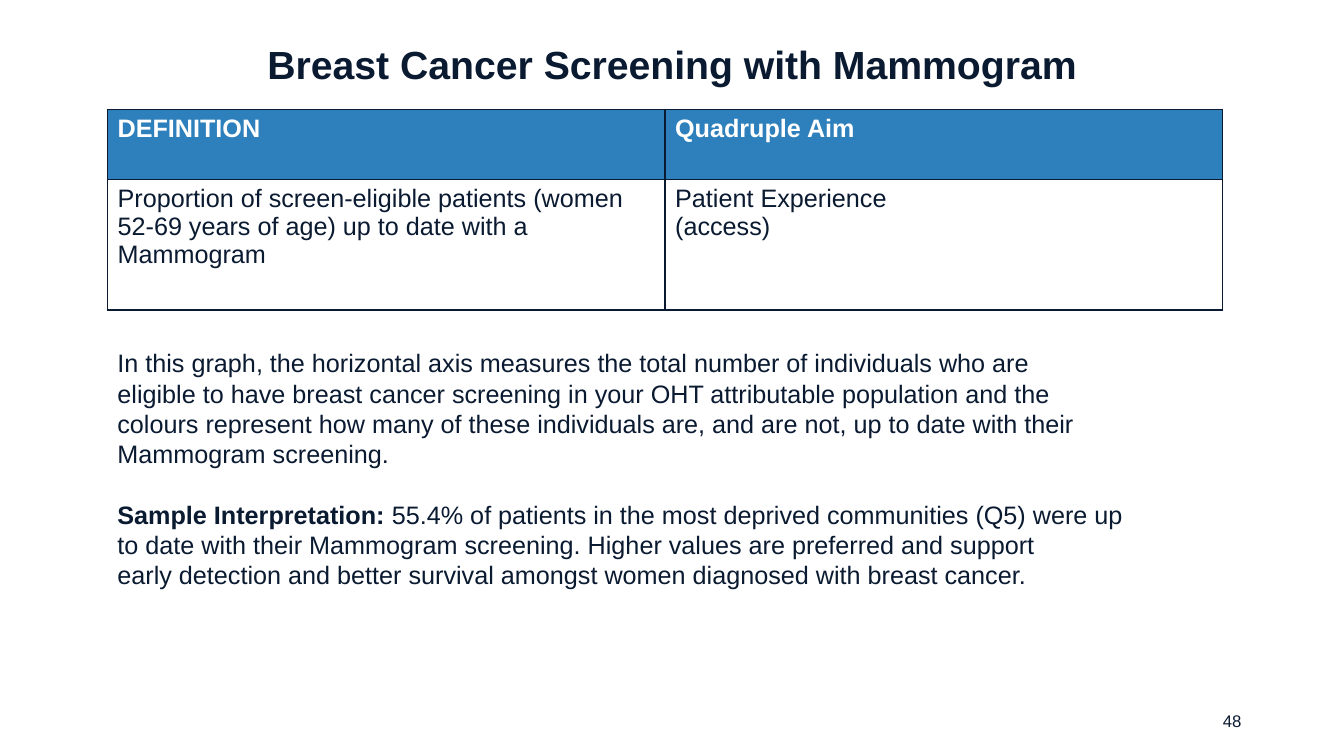
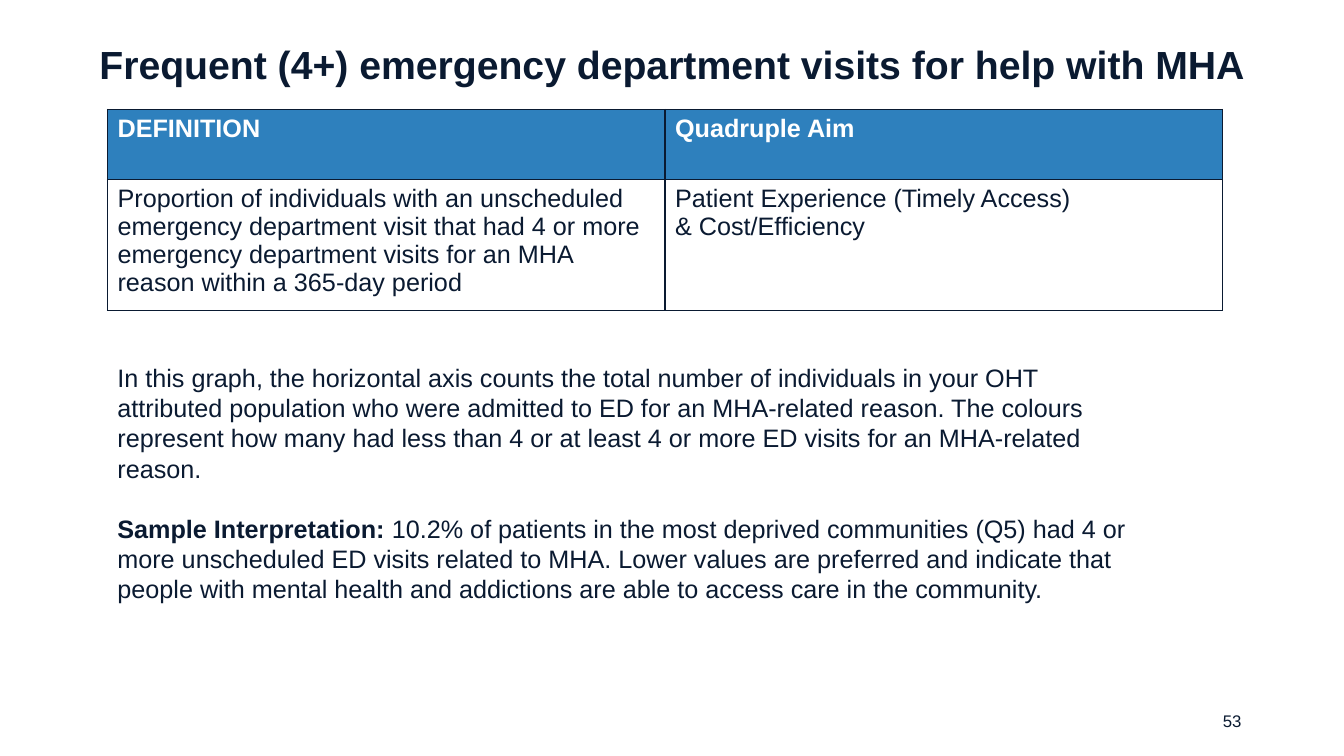
from pptx import Presentation
from pptx.dml.color import RGBColor
from pptx.enum.text import MSO_ANCHOR as Anchor, PP_ALIGN as Align
from pptx.oxml import parse_xml
from pptx.oxml.ns import nsdecls
from pptx.util import Cm, Pt

# Content; a tilde keeps two words on one line
HEADINGS = ["DEFINITION", "Quadruple Aim"]
INTERPRETATION = "Sample Interpretation: "
INDICATORS = [
    {
        "number": "48",
        "title": "Breast Cancer Screening with Mammogram",
        "definition": ["Proportion of screen-eligible patients (women 52-69 years of age) "
                       "up to date with a Mammogram"],
        "aim": ["Patient Experience", "(access)"],
        "text_top": 8.64,
        "text_height": 7.19,
        "graph": "In this graph, the horizontal axis measures the total number of "
                 "individuals who are eligible~to have breast cancer screening in your "
                 "OHT attributable population and the colours~represent how~many of "
                 "these individuals~are, and~are not, up to date with their Mammogram "
                 "screening.",
        "sample": "55.4% of patients in the most deprived communities (Q5) were up to "
                  "date with their Mammogram screening.~Higher values are preferred and "
                  "support early~detection and better survival amongst women diagnosed "
                  "with breast cancer.",
    },
    {
        "number": "53",
        "title": "Frequent (4+) emergency department visits for help with MHA",
        "definition": ["Proportion of individuals with an unscheduled emergency department "
                       "visit that had 4 or more emergency department visits for an MHA "
                       "reason within a 365-day period"],
        "aim": ["Patient Experience (Timely Access)", "& Cost/Efficiency"],
        "text_top": 9.0,
        "text_height": 6.4,
        "graph": "In this graph, the horizontal axis counts the total number of "
                 "individuals in your OHT attributed population who were admitted to ED "
                 "for an MHA-related reason. The colours represent how many had less "
                 "than 4 or at least 4 or more ED visits for an MHA-related reason.",
        "sample": "10.2% of patients in the most deprived communities (Q5) had 4 or more "
                  "unscheduled ED visits related to MHA. Lower values are preferred and "
                  "indicate that people with mental health and addictions are able to "
                  "access care in the community.",
    },
]

# Shared style
FONT = "Arial"
COLORS = {"ink": "0A1A31", "header": "2E80BD", "white": "FFFFFF"}
TITLE_SIZE, BODY_SIZE, NUMBER_SIZE = 28, 18, 12
LEFT, TABLE_TOP = 2.71, 2.76
COLUMN_WIDTH = 14.05
ROW_HEIGHTS = [1.76, 3.29]
HARD_SPACE = chr(160)


def add_span(para, text, size=BODY_SIZE, color="ink", bold=False):
    span = para.add_run()
    span.text = text.replace("~", HARD_SPACE)
    span.font.name = FONT
    span.font.size = Pt(size)
    span.font.bold = bold
    span.font.color.rgb = RGBColor.from_string(COLORS[color])


def add_box(page, left, top, width, height, anchor=Anchor.TOP):
    box = page.shapes.add_textbox(Cm(left), Cm(top), Cm(width), Cm(height))
    frame = box.text_frame
    frame.word_wrap = True
    frame.vertical_anchor = anchor
    return frame


def add_borders(cell):
    properties = cell._tc.get_or_add_tcPr()
    for position, side in enumerate(("lnL", "lnR", "lnT", "lnB")):
        # Borders must come before the cell fill
        properties.insert(position, parse_xml(
            f'<a:{side} {nsdecls("a")} w="12700"><a:solidFill>'
            f'<a:srgbClr val="{COLORS["ink"]}"/></a:solidFill></a:{side}>'))


def fill_cell(cell, lines, fill, color, bold):
    cell.fill.solid()
    cell.fill.fore_color.rgb = RGBColor.from_string(COLORS[fill])
    add_borders(cell)
    frame = cell.text_frame
    for index, line in enumerate(lines):
        para = frame.add_paragraph() if index else frame.paragraphs[0]
        add_span(para, line, color=color, bold=bold)


def add_definition_table(page, indicator):
    rows = [[[heading] for heading in HEADINGS],
            [indicator["definition"], indicator["aim"]]]
    table = page.shapes.add_table(
        len(rows), len(HEADINGS), Cm(LEFT), Cm(TABLE_TOP),
        Cm(COLUMN_WIDTH * len(HEADINGS)), Cm(sum(ROW_HEIGHTS))).table
    for column in table.columns:
        column.width = Cm(COLUMN_WIDTH)
    for row_index, row in enumerate(rows):
        table.rows[row_index].height = Cm(ROW_HEIGHTS[row_index])
        style = ("white", "ink", False) if row_index else ("header", "white", True)
        for column_index, lines in enumerate(row):
            fill_cell(table.cell(row_index, column_index), lines, *style)


def add_indicator(deck, indicator):
    page = deck.slides.add_slide(deck.slide_layouts[6])

    # Page number
    para = add_box(page, 23.92, 17.65, 7.62, 1.02, Anchor.MIDDLE).paragraphs[0]
    para.alignment = Align.RIGHT
    add_span(para, indicator["number"], NUMBER_SIZE)

    # Title
    para = add_box(page, 1.95, 0.61, 29.97, 2.13, Anchor.MIDDLE).paragraphs[0]
    para.alignment = Align.CENTER
    para.line_spacing = 0.9
    add_span(para, indicator["title"], TITLE_SIZE, bold=True)

    add_definition_table(page, indicator)

    # Explanation
    frame = add_box(page, LEFT, indicator["text_top"], 26.21, indicator["text_height"])
    graph, sample = frame.paragraphs[0], frame.add_paragraph()
    sample.space_before = Pt(21.6)
    add_span(graph, indicator["graph"])
    add_span(sample, INTERPRETATION, bold=True)
    add_span(sample, indicator["sample"])


def main():
    deck = Presentation()
    deck.slide_width, deck.slide_height = Cm(33.87), Cm(19.05)
    for indicator in INDICATORS:
        add_indicator(deck, indicator)
    deck.save("out.pptx")


if __name__ == "__main__":
    main()
